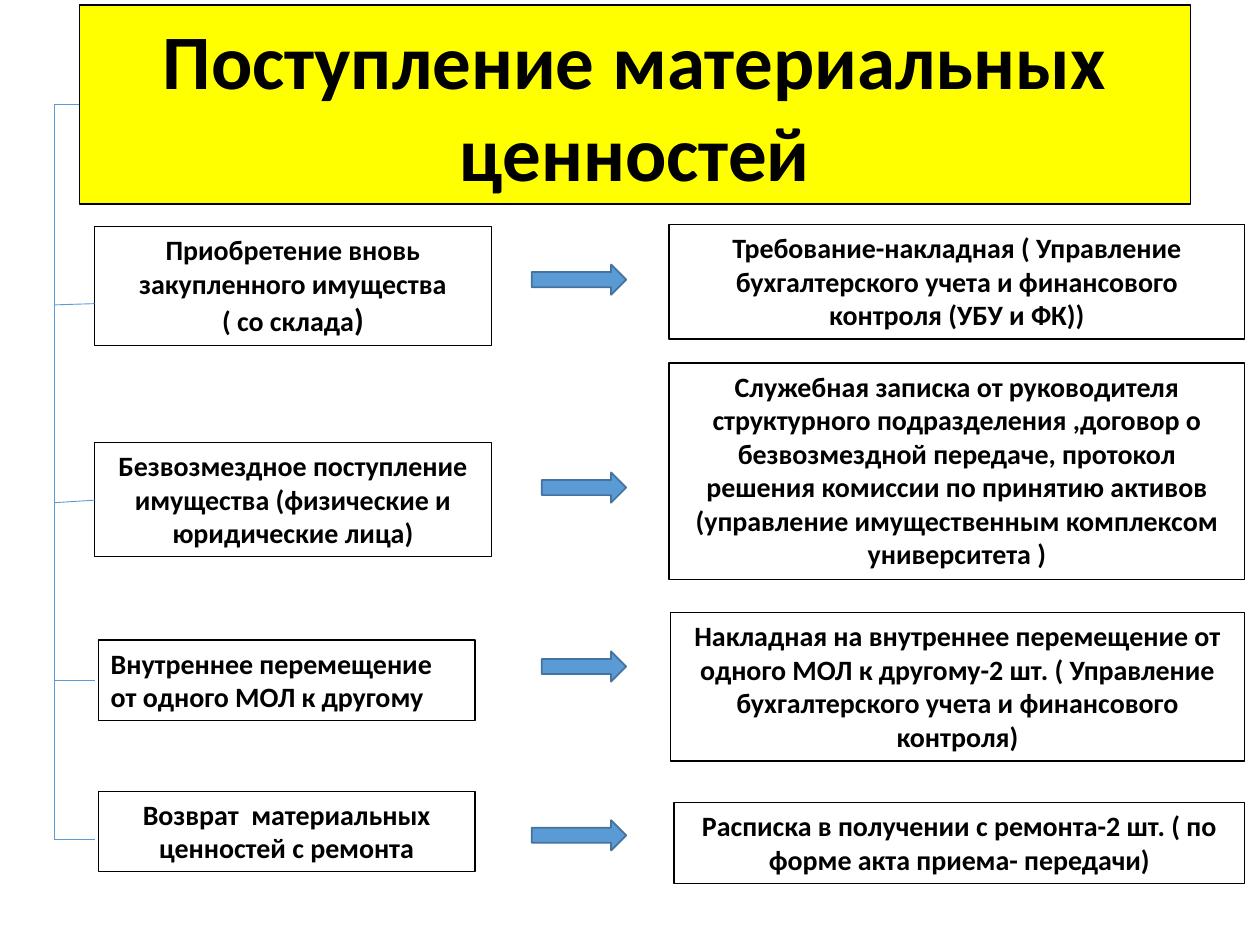
from dataclasses import dataclass

from lxml import etree
from pptx import Presentation
from pptx.dml.color import RGBColor
from pptx.enum.shapes import MSO_CONNECTOR, MSO_SHAPE
from pptx.enum.text import MSO_ANCHOR, MSO_AUTO_SIZE, PP_ALIGN
from pptx.oxml.ns import qn
from pptx.util import Inches, Pt

LEFT, CENTER = PP_ALIGN.LEFT, PP_ALIGN.CENTER
TOP, MIDDLE = MSO_ANCHOR.TOP, MSO_ANCHOR.MIDDLE
FIT_SHAPE = MSO_AUTO_SIZE.SHAPE_TO_FIT_TEXT
RIGHT_ARROW = MSO_SHAPE.RIGHT_ARROW
STRAIGHT = MSO_CONNECTOR.STRAIGHT
TITLE_ONLY = 5


@dataclass(frozen=True)
class Theme:
    font: str = "Calibri"
    ink: RGBColor = RGBColor(0x00, 0x00, 0x00)
    title_fill: RGBColor = RGBColor(0xFF, 0xFF, 0x00)
    accent: RGBColor = RGBColor(0x5B, 0x9B, 0xD5)
    accent_edge: RGBColor = RGBColor(0x43, 0x73, 0x9E)
    title_size: int = 44
    body_size: int = 16
    bracket_size: int = 18
    border: float = 0.75
    arrow_border: float = 1
    branch_width: float = 0.5


def write(frame, paragraphs, *, font, size, color, bold=True, align=CENTER, anchor=TOP):
    """Fill a frame; each paragraph is a list of (text, size or None) runs."""
    frame.word_wrap = True
    frame.auto_size = FIT_SHAPE
    frame.vertical_anchor = anchor
    for index, runs in enumerate(paragraphs):
        paragraph = frame.add_paragraph() if index else frame.paragraphs[0]
        paragraph.alignment = align
        for text, own_size in runs:
            run = paragraph.add_run()
            run.text = text
            run.font.name = font
            run.font.size = Pt(own_size or size)
            run.font.bold = bold
            run.font.color.rgb = color


class SlideBuilder:
    def __init__(self, slide, theme):
        self.slide = slide
        self.theme = theme

    def outline(self, shape, color, width):
        shape.line.color.rgb = color
        shape.line.width = Pt(width)

    def title(self, text, left, top, width, height):
        theme, title = self.theme, self.slide.shapes.title
        title.left, title.top = Inches(left), Inches(top)
        title.width, title.height = Inches(width), Inches(height)
        title.fill.solid()
        title.fill.fore_color.rgb = theme.title_fill
        self.outline(title, theme.ink, theme.border)
        write(title.text_frame, [[(text, None)]], font=theme.font,
              size=theme.title_size, color=theme.ink, anchor=MIDDLE)

    def box(self, paragraphs, left, top, width, height, align=CENTER):
        theme = self.theme
        box = self.slide.shapes.add_textbox(
            Inches(left), Inches(top), Inches(width), Inches(height))
        self.outline(box, theme.ink, theme.border)
        write(box.text_frame, paragraphs, font=theme.font,
              size=theme.body_size, color=theme.ink, align=align)

    def arrow(self, tip, middle, length, height=0.24):
        arrow = self.slide.shapes.add_shape(
            RIGHT_ARROW, Inches(tip - length), Inches(middle - height / 2),
            Inches(length), Inches(height))
        arrow.shadow.inherit = False
        arrow.fill.solid()
        arrow.fill.fore_color.rgb = self.theme.accent
        self.outline(arrow, self.theme.accent_edge, self.theme.arrow_border)

    def branch(self, x1, y1, x2, y2):
        branch = self.slide.shapes.add_connector(
            STRAIGHT, Inches(x1), Inches(y1), Inches(x2), Inches(y2))
        self.outline(branch, self.theme.accent, self.theme.branch_width)
        etree.SubElement(branch._element.spPr, qn("a:effectLst"))


def plain(text):
    return [[(text, None)]]


def main():
    theme = Theme()
    deck = Presentation()
    deck.slide_width, deck.slide_height = Inches(10), Inches(7.5)
    builder = SlideBuilder(deck.slides.add_slide(deck.slide_layouts[TITLE_ONLY]), theme)

    trunk_x, branch_end, title_left, title_branch_y = 0.43, 0.75, 0.63, 0.83
    arrow_tip, documents_right = 4.97, 9.88

    # source paragraphs, its box, alignment; branch start and end y;
    # arrow middle and length; document text, its left, top and height
    receipts = [
        ([[("Приобретение вновь закупленного имущества", None)],
          [("( со склада", None), (")", theme.bracket_size)]],
         (0.75, 1.8, 3.15, 0.94), CENTER, (2.42, 2.41), (2.22, 0.75),
         "Требование-накладная ( Управление бухгалтерского учета и финансового "
         "контроля (УБУ и ФК))", (5.31, 1.78, 0.91)),
        (plain("Безвозмездное поступление имущества (физические и юридические лица)"),
         (0.75, 3.51, 3.15, 0.91), CENTER, (3.99, 3.97), (3.87, 0.67),
         "Служебная записка от руководителя структурного подразделения ,договор о "
         "безвозмездной передаче, протокол решения комиссии по принятию активов "
         "(управление имущественным комплексом университета )", (5.31, 2.88, 1.72)),
        (plain("Внутреннее перемещение от одного МОЛ к другому"),
         (0.78, 5.08, 2.99, 0.64), LEFT, (5.4, 5.4), (5.29, 0.67),
         "Накладная на внутреннее перемещение от одного МОЛ к другому-2 шт. "
         "( Управление бухгалтерского учета и финансового контроля)", (5.32, 4.86, 1.18)),
        (plain("Возврат  материальных ценностей с ремонта"),
         (0.78, 6.28, 2.99, 0.64), CENTER, (6.66, 6.66), (6.63, 0.75),
         "Расписка в получении с ремонта-2 шт. ( по форме акта приема- передачи)",
         (5.35, 6.37, 0.64)),
    ]

    builder.title("Поступление материальных ценностей", title_left, 0.04, 8.82, 1.58)
    builder.branch(title_left, title_branch_y, trunk_x, title_branch_y)
    trunk_bottom = receipts[-1][3][0]
    builder.branch(trunk_x, title_branch_y, trunk_x, trunk_bottom)

    for source, source_box, align, branch_ys, arrow, document, document_box in receipts:
        start_y, end_y = branch_ys
        left, top, height = document_box
        builder.box(source, *source_box, align=align)
        builder.branch(trunk_x, start_y, branch_end, end_y)
        builder.arrow(arrow_tip, *arrow)
        builder.box(plain(document), left, top, documents_right - left, height)

    deck.save("out.pptx")


if __name__ == "__main__":
    main()
